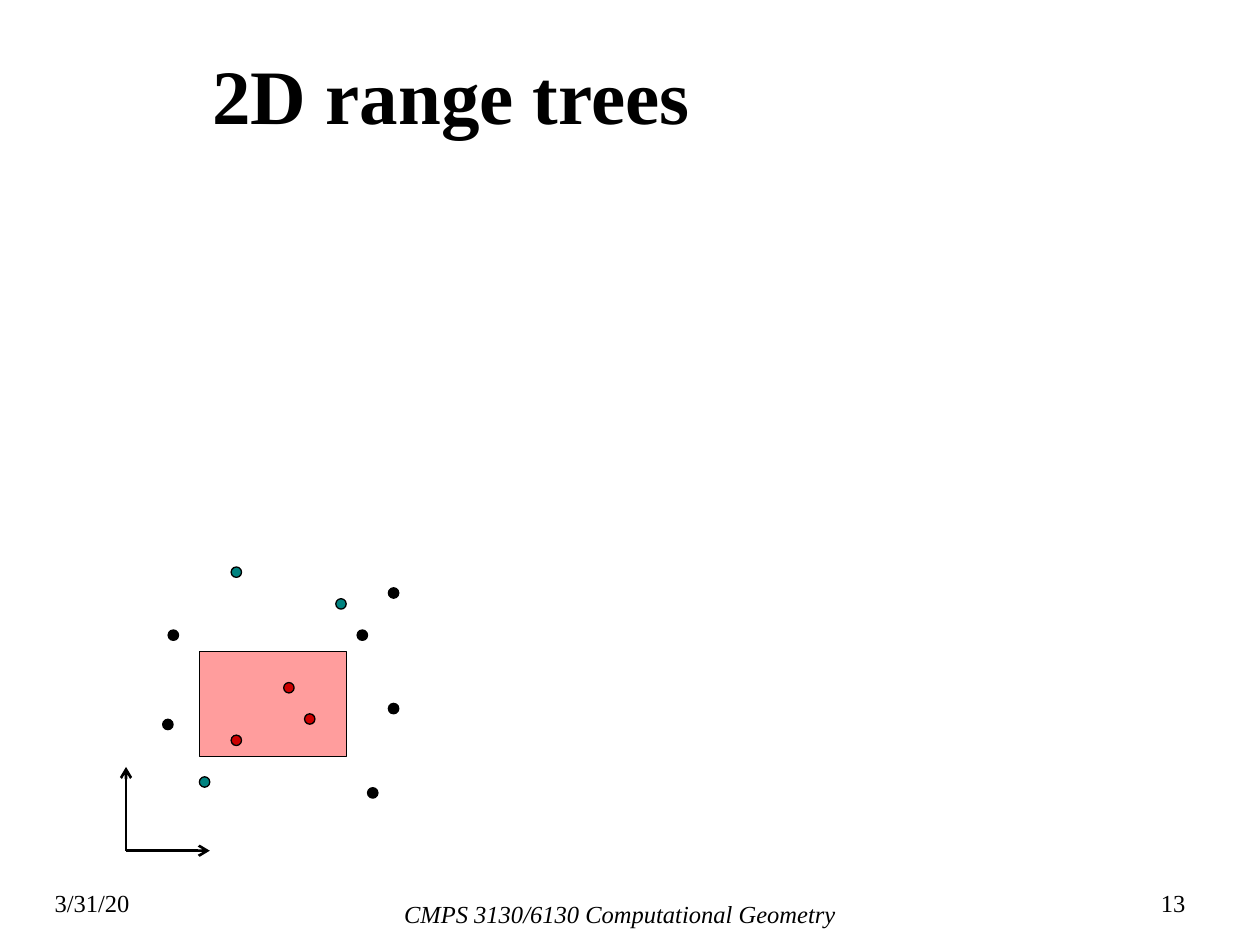
from dataclasses import dataclass

from lxml import etree
from pptx import Presentation
from pptx.dml.color import RGBColor
from pptx.enum.shapes import MSO_CONNECTOR, MSO_SHAPE
from pptx.enum.text import MSO_ANCHOR, MSO_AUTO_SIZE, PP_ALIGN
from pptx.oxml.ns import qn
from pptx.util import Cm, Pt

OVAL, RECT = MSO_SHAPE.OVAL, MSO_SHAPE.RECTANGLE
LINE = MSO_CONNECTOR.STRAIGHT
LEFT, MID, RIGHT = PP_ALIGN.LEFT, PP_ALIGN.CENTER, PP_ALIGN.RIGHT
TOP, CENTER = MSO_ANCHOR.TOP, MSO_ANCHOR.MIDDLE
NO_FIT, GROW = MSO_AUTO_SIZE.NONE, MSO_AUTO_SIZE.SHAPE_TO_FIT_TEXT


@dataclass(frozen=True)
class Theme:
    font: str = "Times New Roman"
    ink: str = "000000"
    near: str = "008380"
    hit: str = "CC0000"
    query: str = "FF9D9D"
    head: int = 44
    small: int = 14
    thin: float = 0.75
    thick: float = 1.5


THEME = Theme()
DOT = 0.21
AXIS = 1.69

# Point positions within the plot, in cm
OUTER = [(0.74, 3.07), (4.66, 1.27), (0.85, 1.27), (5.29, 2.75),
         (4.87, 4.45), (5.29, 0.42)]
NEAR = [(2.12, 0), (1.48, 4.23), (4.23, 0.64)]
HITS = [(3.18, 2.33), (3.6, 2.96), (2.12, 3.39)]
QUERY = (1.48, 1.7, 2.96, 2.12)


def color(code):
    return RGBColor.from_string(code)


def add_text(slide, text, box, size=THEME.small, bold=False, italic=False,
             align=LEFT, anchor=TOP, wrap=False, fit=GROW, space=None):
    frame = slide.shapes.add_textbox(*map(Cm, box)).text_frame
    frame.word_wrap = wrap
    frame.auto_size = fit
    frame.vertical_anchor = anchor
    par = frame.paragraphs[0]
    par.alignment = align
    par.line_spacing = space
    run = par.add_run()
    run.text = text
    font = run.font
    font.name, font.size = THEME.font, Pt(size)
    font.bold, font.italic = bold, italic
    font.color.rgb = color(THEME.ink)


def add_shape(shapes, kind, box, fill):
    shape = shapes.add_shape(kind, *map(Cm, box))
    shape.shadow.inherit = False
    shape.fill.solid()
    shape.fill.fore_color.rgb = color(fill)
    shape.line.color.rgb = color(THEME.ink)
    shape.line.width = Pt(THEME.thin)


def add_arrow(shapes, start, end):
    arrow = shapes.add_connector(LINE, *map(Cm, start + end))
    arrow.line.color.rgb = color(THEME.ink)
    arrow.line.width = Pt(THEME.thick)
    line = arrow.line._get_or_add_ln()
    etree.SubElement(line, qn("a:tailEnd"), type="arrow")
    etree.SubElement(arrow._element.spPr, qn("a:effectLst"))


def add_dots(shapes, left, top, spots, fill):
    for x, y in spots:
        add_shape(shapes, OVAL, (left + x, top + y, DOT, DOT), fill)


def add_plot(slide, left, top, width, height):
    shapes = slide.shapes
    add_dots(shapes, left, top, OUTER, THEME.ink)
    add_dots(shapes, left, top, NEAR, THEME.near)

    # Axes from the lower left corner
    base = top + height
    axes = shapes.add_group_shape().shapes
    for end in ((left, base - AXIS), (left + AXIS, base)):
        add_arrow(axes, (left, base), end)

    # Query range and the points in it
    x, y, wide, high = QUERY
    add_shape(shapes, RECT, (left + x, top + y, wide, high), THEME.query)
    add_dots(shapes.add_group_shape().shapes, left, top, HITS, THEME.hit)


def add_footer(slide, left, top, width, height):
    num, date, name = 1.1, 2.03, 9.4
    add_text(slide, "13", (left + width - num, top, num, height), align=RIGHT)
    add_text(slide, "3/31/20", (left, top, date, height))
    mid = left + (width - name) / 2
    add_text(slide, "CMPS 3130/6130 Computational Geometry",
             (mid, top + 0.22, name, height), italic=True, align=MID)


def add_title(slide, *box):
    add_text(slide, "2D range trees", box, size=THEME.head, bold=True,
             anchor=CENTER, wrap=True, fit=NO_FIT, space=0.9)


def main():
    deck = Presentation()
    deck.slide_width, deck.slide_height = Cm(25.4), Cm(19.05)
    slide = deck.slides.add_slide(deck.slide_layouts[6])
    add_footer(slide, 0.85, 17.78, 23.7 - 0.4 + 0.4 - 0.4, 0.86)
    add_title(slide, 4.03, 0.41, 20.96, 3.18)
    add_plot(slide, 2.54, 11.43, 5.5, 5.72)
    deck.save("out.pptx")


if __name__ == "__main__":
    main()
